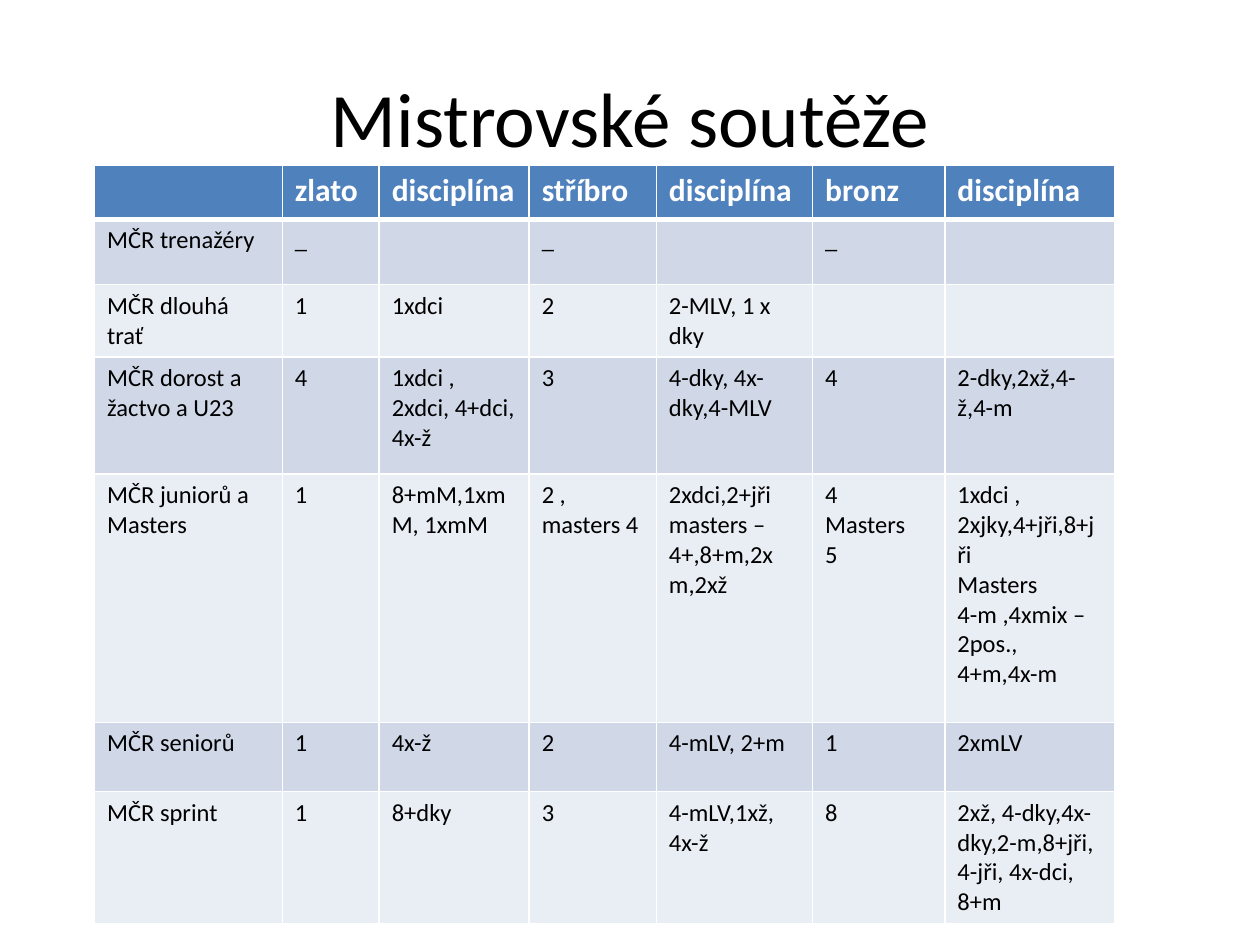
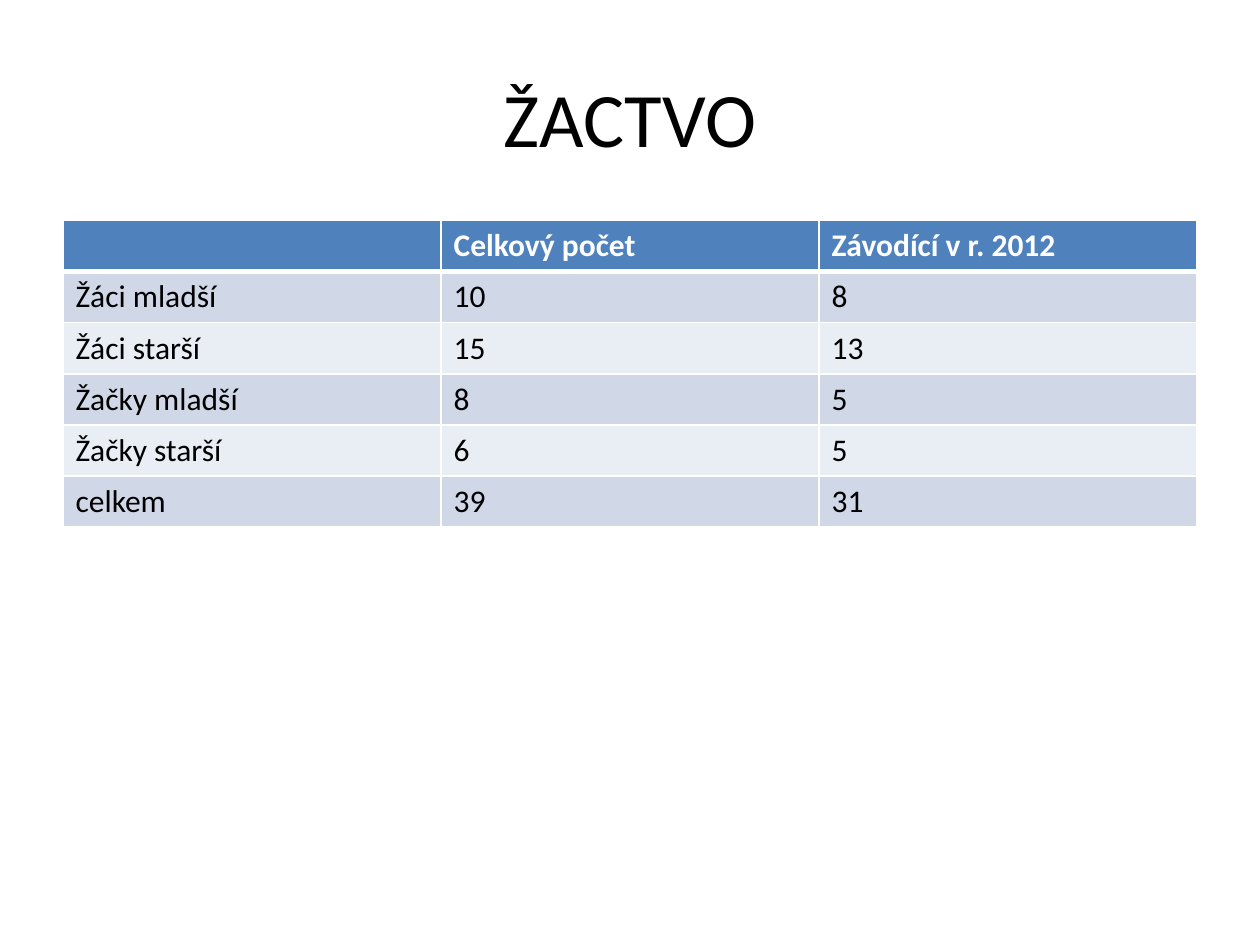
from dataclasses import dataclass

from lxml import etree
from pptx import Presentation
from pptx.dml.color import RGBColor
from pptx.enum.text import MSO_ANCHOR, PP_ALIGN
from pptx.oxml.ns import qn
from pptx.util import Pt

MIDDLE = MSO_ANCHOR.MIDDLE
CENTER = PP_ALIGN.CENTER
TITLE_ONLY = 5


@dataclass(frozen=True)
class Theme:
    """Colours, font and type sizes shared by the slides."""
    font: str = "Calibri"
    ink: str = "000000"
    paper: str = "FFFFFF"
    head: str = "4F81BD"
    bands: tuple = ("D0D8E8", "E9EDF4")
    title: int = 44
    text: int = 18
    small: int = 14
    rule: int = 1
    thick: int = 3


THEME = Theme()

MEDALS = [
    ["", "zlato", "disciplína", "stříbro", "disciplína", "bronz", "disciplína"],
    ["MČR trenažéry", "_", "", "_", "", "_", ""],
    ["MČR dlouhá trať", "1", "1xdci", "2", "2-MLV, 1 x dky", "", ""],
    ["MČR dorost a žactvo a U23", "4", "1xdci , 2xdci, 4+dci,\n4x-ž", "3",
     "4-dky, 4x-dky,4-MLV", "4", "2-dky,2xž,4-ž,4-m"],
    ["MČR juniorů a Masters", "1", "8+mM,1xmM, 1xmM", "2 , masters 4",
     "2xdci,2+jři\nmasters – 4+,8+m,2x m,2xž", "4\nMasters\n5",
     "1xdci , 2xjky,4+jři,8+jři\nMasters\n4-m ,4xmix – 2pos., 4+m,4x-m"],
    ["MČR seniorů", "1", "4x-ž", "2", "4-mLV, 2+m", "1", "2xmLV"],
    ["MČR sprint", "1", "8+dky", "3", "4-mLV,1xž, 4x-ž", "8",
     "2xž, 4-dky,4x-dky,2-m,8+jři, 4-jři, 4x-dci, 8+m"],
]
MEDAL_COLS = [107.3, 55.4, 85.7, 72.7, 89.3, 75.6, 97.2]
MEDAL_ROWS = [31, 37.4, 39.6, 67, 141.8, 39.6, 46.8]

PUPILS = [
    ["", "Celkový počet", "Závodící v r. 2012"],
    ["Žáci mladší", "10", "8"],
    ["Žáci starší", "15", "13"],
    ["Žačky mladší", "8", "5"],
    ["Žačky starší", "6", "5"],
    ["celkem", "39", "31"],
]


def style_text(frame, size, color, bold=False):
    """Set one font on every paragraph of a text frame."""
    for para in frame.paragraphs:
        font = para.font
        font.name, font.size, font.bold = THEME.font, Pt(size), bold
        font.color.rgb = RGBColor.from_string(color)


def add_page(deck, title):
    """Add a slide with a centred title."""
    page = deck.slides.add_slide(deck.slide_layouts[TITLE_ONLY])
    box = page.shapes.title
    box.left, box.top, box.width, box.height = Pt(36), Pt(21.6), Pt(648), Pt(90)
    frame = box.text_frame
    frame.text = title
    frame.vertical_anchor = MIDDLE
    frame.paragraphs[0].alignment = CENTER
    style_text(frame, THEME.title, THEME.ink)
    return page


def rule_cell(cell, top, base):
    """Draw the four borders of a cell."""
    props = cell._tc.get_or_add_tcPr()
    sides = {"L": THEME.rule, "R": THEME.rule, "T": top, "B": base}
    for spot, (side, width) in enumerate(sides.items()):
        line = etree.Element(qn(f"a:ln{side}"), w=str(Pt(width)))
        fill = etree.SubElement(line, qn("a:solidFill"))
        etree.SubElement(fill, qn("a:srgbClr"), val=THEME.paper)
        props.insert(spot, line)


def fill_cell(cell, text, row, size):
    """Write and colour a cell by its row."""
    head = row == 0
    cell.text = text
    style_text(cell.text_frame, THEME.text if head else size,
               THEME.paper if head else THEME.ink, head)
    cell.fill.solid()
    color = THEME.head if head else THEME.bands[(row - 1) % 2]
    cell.fill.fore_color.rgb = RGBColor.from_string(color)
    rule_cell(cell, THEME.thick if row == 1 else THEME.rule,
              THEME.thick if head else THEME.rule)


def add_grid(page, data, left, top, cols, rows, size):
    """Add a banded table with a header row."""
    grid = page.shapes.add_table(len(rows), len(cols), Pt(left), Pt(top),
                                 Pt(sum(cols)), Pt(sum(rows))).table
    for col, width in zip(grid.columns, cols):
        col.width = Pt(width)
    for row, height in zip(grid.rows, rows):
        row.height = Pt(height)
    for row, texts in enumerate(data):
        for col, text in enumerate(texts):
            fill_cell(grid.cell(row, col), text, row, size)


def main():
    """Build and save both slides."""
    deck = Presentation()
    deck.slide_width, deck.slide_height = Pt(720), Pt(540)
    page = add_page(deck, "Mistrovské soutěže")
    add_grid(page, MEDALS, 54, 94.3, MEDAL_COLS, MEDAL_ROWS, THEME.small)
    page = add_page(deck, "ŽACTVO")
    add_grid(page, PUPILS, 36, 126, [216] * 3, [29.2] * len(PUPILS), THEME.text)
    deck.save("out.pptx")


if __name__ == "__main__":
    main()
